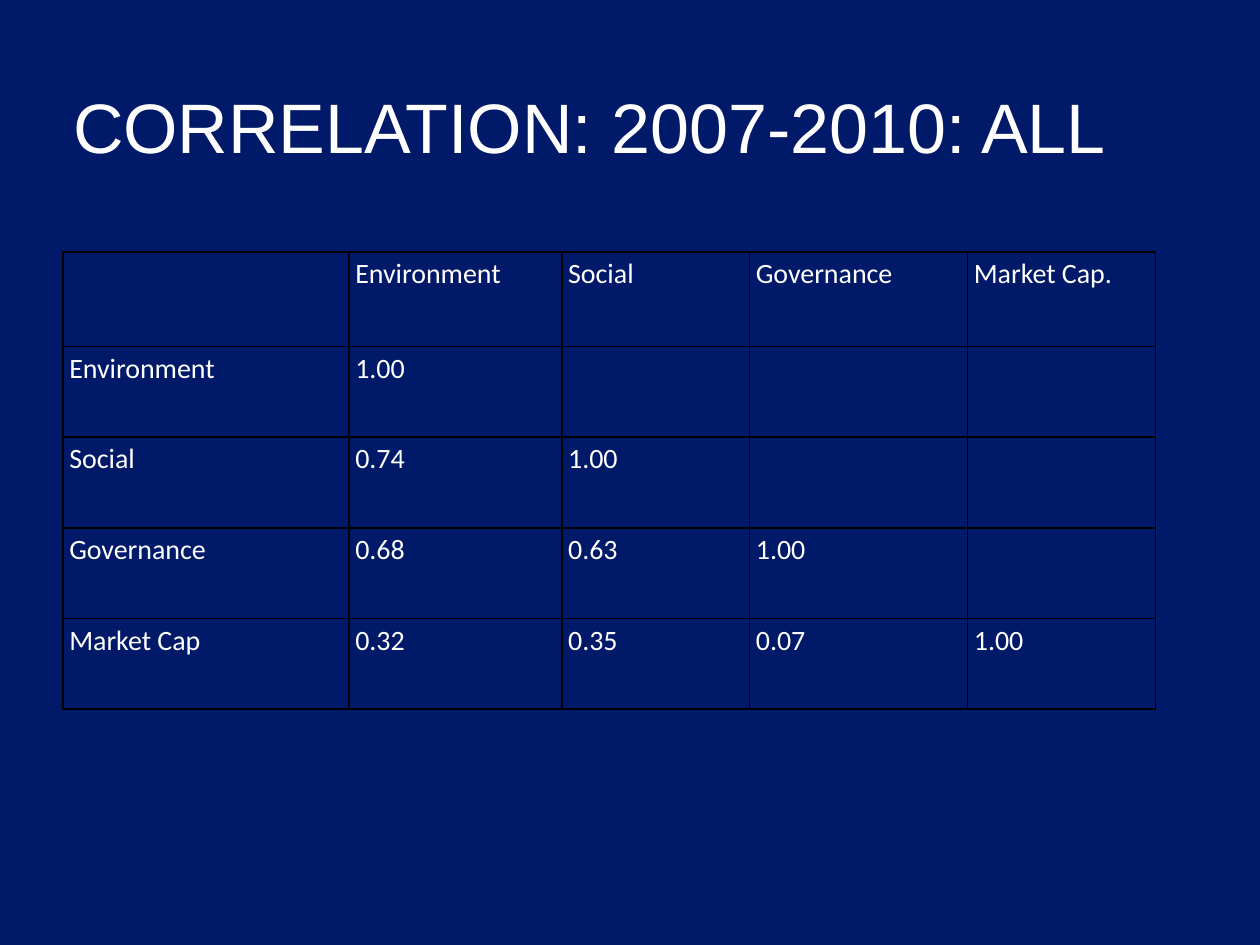
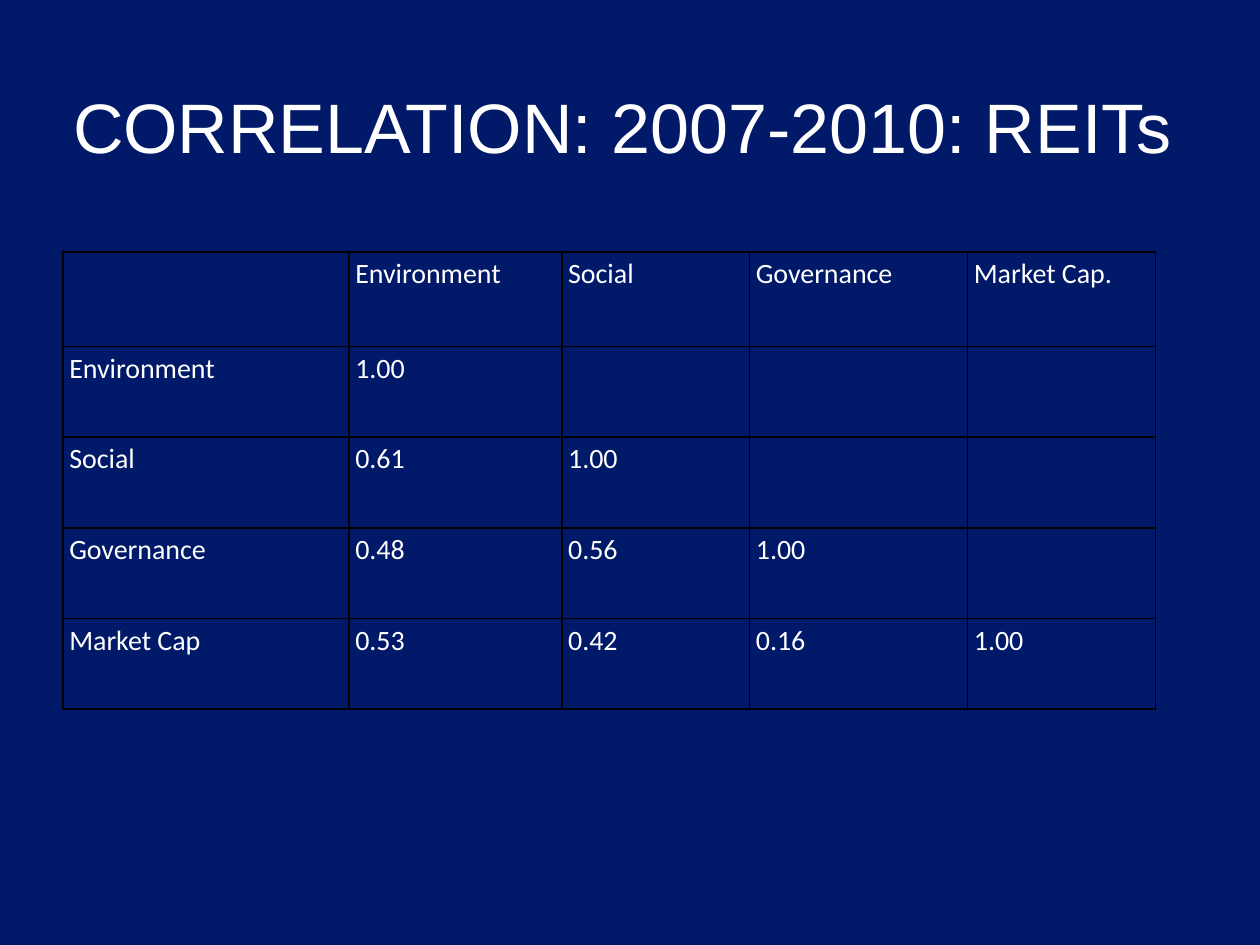
from lxml import etree
from pptx import Presentation
from pptx.dml.color import RGBColor
from pptx.enum import text
from pptx.oxml import ns
from pptx.util import Inches, Pt

# Shared look
NAVY = RGBColor(0x00, 0x19, 0x68)
WHITE = RGBColor(0xFF, 0xFF, 0xFF)
BLACK = RGBColor(0x00, 0x00, 0x00)
TITLE_BOX = (0.5, 0.58, 9.14, 0.79)
TABLE_BOX = (0.5, 2, 8.67, 3.64)

# Table grid, in inches
COLUMN_WIDTHS = (2.27, 1.69, 1.49, 1.73, 1.49)
HEADER_HEIGHT = 0.75
ROW_HEIGHT = 0.72

HEADERS = ("", "Environment", "Social", "Governance", "Market Cap.")
FACTORS = ("Environment", "Social", "Governance", "Market Cap")

# Lower triangle of each correlation matrix
CORRELATIONS = {
    "CORRELATION: 2007-2010: ALL": (
        (1.00,),
        (0.74, 1.00),
        (0.68, 0.63, 1.00),
        (0.32, 0.35, 0.07, 1.00),
    ),
    "CORRELATION: 2007-2010: REITs": (
        (1.00,),
        (0.61, 1.00),
        (0.48, 0.56, 1.00),
        (0.53, 0.42, 0.16, 1.00),
    ),
}


def set_font(para, name, size):
    para.font.name = name
    para.font.size = Pt(size)
    para.font.color.rgb = WHITE


def add_title(page, box, wording):
    title = page.shapes.title
    title.left, title.top, title.width, title.height = map(Inches, box)
    frame = title.text_frame
    frame.text = wording
    frame.word_wrap = True
    frame.auto_size = text.MSO_AUTO_SIZE.NONE
    frame.vertical_anchor = text.MSO_ANCHOR.BOTTOM
    frame.margin_left = frame.margin_right = Inches(0.08)
    frame.margin_top = frame.margin_bottom = Inches(0.04)
    para = frame.paragraphs[0]
    para.alignment = text.PP_ALIGN.LEFT
    set_font(para, "Arial", 40)


def add_borders(cell):
    properties = cell._tc.get_or_add_tcPr()
    for side in ("a:lnL", "a:lnR", "a:lnT", "a:lnB"):
        line = etree.SubElement(properties, ns.qn(side), w=str(Pt(1)))
        fill = etree.SubElement(line, ns.qn("a:solidFill"))
        etree.SubElement(fill, ns.qn("a:srgbClr"), val=str(BLACK))


def fill_cell(cell, wording):
    add_borders(cell)
    cell.fill.background()
    cell.margin_left = cell.margin_right = Inches(0.05)
    cell.margin_top = cell.margin_bottom = 0
    cell.text = wording
    para = cell.text_frame.paragraphs[0]
    para.line_spacing = 1.15
    set_font(para, "Calibri", 16)


def add_matrix(page, box, triangle):
    size = len(HEADERS)
    table = page.shapes.add_table(size, size, *map(Inches, box)).table
    table.first_row = table.horz_banding = False
    for column, width in zip(table.columns, COLUMN_WIDTHS):
        column.width = Inches(width)
    for index, row in enumerate(table.rows):
        row.height = Inches(ROW_HEIGHT if index else HEADER_HEIGHT)

    # Pad each row of values to the full width of the table
    rows = [HEADERS]
    for factor, values in zip(FACTORS, triangle):
        labels = [factor] + [f"{value:.2f}" for value in values]
        rows.append(labels + [""] * (size - len(labels)))
    for row, labels in zip(table.rows, rows):
        for cell, label in zip(row.cells, labels):
            fill_cell(cell, label)


def add_correlation_page(deck, heading, triangle):
    page = deck.slides.add_slide(deck.slide_layouts.get_by_name("Title Only"))
    add_title(page, TITLE_BOX, heading)
    add_matrix(page, TABLE_BOX, triangle)


def main():
    deck = Presentation()
    deck.slide_width, deck.slide_height = Inches(10), Inches(7.5)
    background = deck.slide_master.background.fill
    background.solid()
    background.fore_color.rgb = NAVY
    for heading, triangle in CORRELATIONS.items():
        add_correlation_page(deck, heading, triangle)
    deck.save("out.pptx")


if __name__ == "__main__":
    main()
